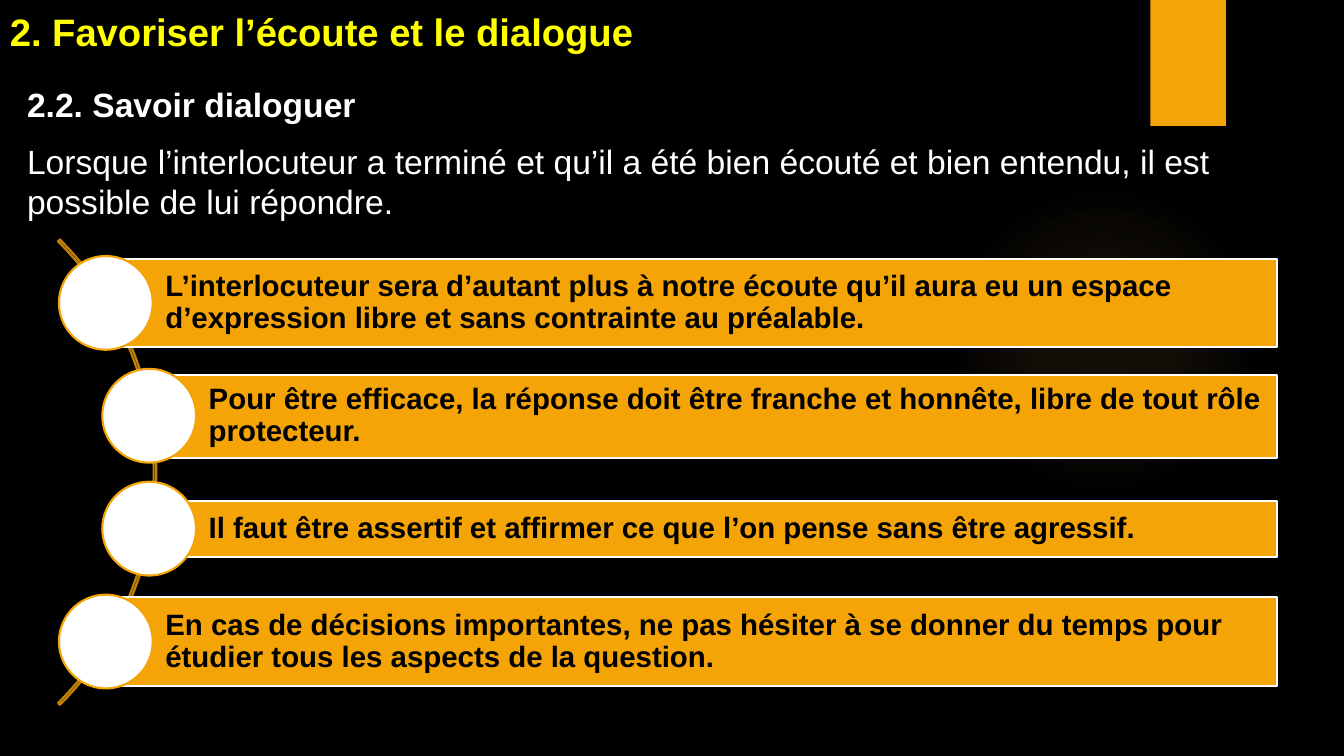
"""Builds the slide on dialogue: a heading, an introduction and four points along an arc."""
from lxml import etree
from pptx import Presentation
from pptx.dml.color import RGBColor as RGB
from pptx.enum.shapes import MSO_SHAPE as SHAPE
from pptx.enum.text import MSO_ANCHOR as ANCHOR, PP_ALIGN as ALIGN
from pptx.oxml import parse_xml
from pptx.oxml.ns import nsdecls, qn
from pptx.util import Inches, Pt

COLORS = {"black": "000000", "white": "FFFFFF", "yellow": "FFFF00",
          "orange": "F5A408", "brown": "C48306", "glow": "FAC96A"}
GLOW_STOPS = [(0, 7), (36, 6), (69, 0)]
BAR_RIGHT = 12.67
DISC = 0.93
POINTS = [
    (1.05, 2.57, 0.87, "L’interlocuteur sera d’autant plus à notre écoute qu’il aura eu "
                       "un espace d’expression libre et sans contrainte au préalable."),
    (1.48, 3.72, 0.82, "Pour être efficace, la réponse doit être franche et honnête, "
                       "libre de tout rôle protecteur."),
    (1.48, 4.97, 0.56, "Il faut être assertif et affirmer ce que l’on pense sans être agressif."),
    (1.05, 5.92, 0.89, "En cas de décisions importantes, ne pas hésiter à se donner du temps "
                       "pour étudier tous les aspects de la question."),
]


class SlideBuilder:
    """Holds the style and the current slide."""

    def __init__(self, slide, font="Arial"):
        self.slide = slide
        self.font = font

    def color(self, name):
        return RGB.from_string(COLORS[name])

    def background(self, name):
        fill = self.slide.background.fill
        fill.solid()
        fill.fore_color.rgb = self.color(name)

    def shape(self, kind, box, fill=None, line=None):
        sp = self.slide.shapes.add_shape(kind, *map(Inches, box))
        sp.shadow.inherit = False
        if fill:
            sp.fill.solid()
            sp.fill.fore_color.rgb = self.color(fill)
        else:
            sp.fill.background()
        if line:
            sp.line.color.rgb = self.color(line)
            sp.line.width = Pt(1.5)
        else:
            sp.line.fill.background()
        return sp

    def glow(self, box):
        sp = self.shape(SHAPE.OVAL, box)
        stops = "".join(
            f'<a:gs pos="{pos * 1000}"><a:srgbClr val="{COLORS["glow"]}">'
            f'<a:alpha val="{alpha * 1000}"/></a:srgbClr></a:gs>'
            for pos, alpha in GLOW_STOPS)
        gradient = parse_xml(
            f'<a:gradFill {nsdecls("a")} rotWithShape="1"><a:gsLst>{stops}</a:gsLst>'
            '<a:path path="circle"><a:fillToRect l="50000" t="50000" r="50000" b="50000"/>'
            '</a:path></a:gradFill>')
        sp_pr = sp.fill._xPr
        sp_pr.replace(sp_pr.find(qn("a:noFill")), gradient)

    def arc(self, box):
        sp = self.shape(SHAPE.BLOCK_ARC, box, line="brown")
        for i, value in enumerate((189, 27, 0.004)):
            sp.adjustments[i] = value

    def style(self, p, text, size, color, bold=True):
        p.text = text
        p.font.name = self.font
        p.font.size = Pt(size)
        p.font.bold = bold
        p.font.color.rgb = self.color(color)

    def text_box(self, box, anchor=ANCHOR.TOP):
        tf = self.slide.shapes.add_textbox(*map(Inches, box)).text_frame
        tf.word_wrap = True
        tf.vertical_anchor = anchor
        return tf

    def point(self, left, top, height, text):
        bar = self.shape(SHAPE.RECTANGLE, (left, top, BAR_RIGHT - left, height),
                         "orange", "white")
        tf = bar.text_frame
        tf.word_wrap = True
        tf.vertical_anchor = ANCHOR.MIDDLE
        tf.margin_left = Inches(0.59)
        tf.margin_top = tf.margin_right = tf.margin_bottom = Inches(0.06)
        p = tf.paragraphs[0]
        p.alignment = ALIGN.LEFT
        p.line_spacing = 0.9
        self.style(p, text, 21, "black")

    def disc(self, center_x, center_y):
        box = (center_x - DISC / 2, center_y - DISC / 2, DISC, DISC)
        self.shape(SHAPE.OVAL, box, "white", "orange")


def main():
    prs = Presentation()
    prs.slide_width, prs.slide_height = Inches(13.33), Inches(7.5)
    s = SlideBuilder(prs.slides.add_slide(prs.slide_layouts[6]))
    s.background("black")
    s.glow((9.41, 1.83, 3.08, 3.08))
    s.shape(SHAPE.RECTANGLE, (11.41, 0, 0.75, 1.25), "orange")

    title = s.text_box((0, 0, 13.14, 0.59), ANCHOR.BOTTOM)
    s.style(title.paragraphs[0], "2. Favoriser l’écoute et le dialogue", 27.3, "yellow")

    intro = s.text_box((0.17, 0.78, 12.14, 1.48))
    p = intro.paragraphs[0]
    p.alignment = ALIGN.JUSTIFY
    p.space_after = Pt(6)
    s.style(p, "2.2. Savoir dialoguer", 24, "white")
    p = intro.add_paragraph()
    p.space_before = Pt(6)
    s.style(p, "Lorsque l’interlocuteur a terminé et qu’il a été bien écouté et bien "
               "entendu, il est possible de lui répondre.", 24, "white", bold=False)

    s.arc((-4.98, 1.42, 6.53, 6.53))
    for i, (left, top, height, text) in enumerate(POINTS):
        s.point(left, top, height, text)
        s.disc(left, 3.005 + 1.12 * i)
    prs.save("out.pptx")


if __name__ == "__main__":
    main()
